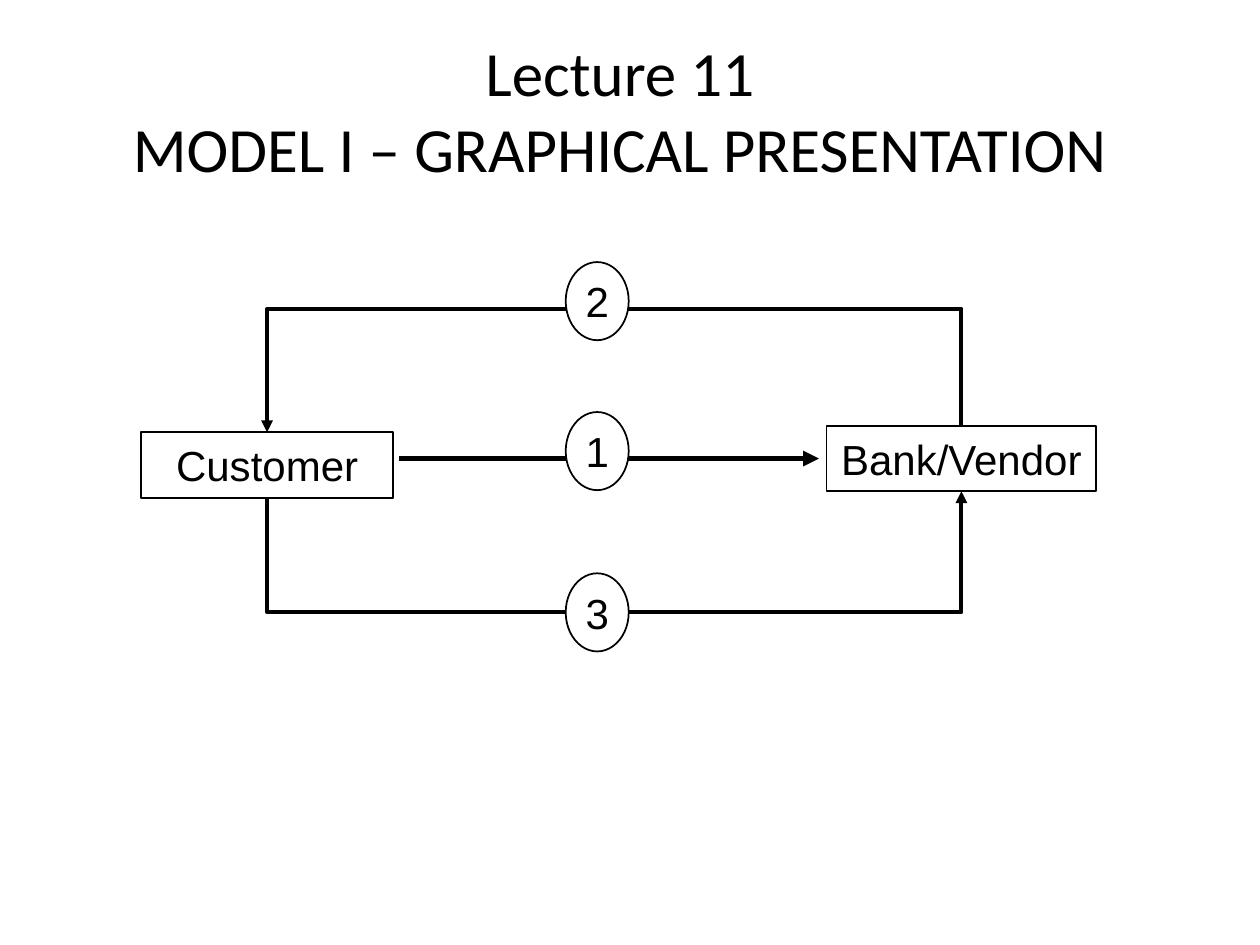
import pptx
import pptx.util
import pptx.dml.color
import pptx.enum.shapes
import pptx.enum.text
import pptx.oxml
import pptx.oxml.ns

Inches, Pt = pptx.util.Inches, pptx.util.Pt
SHAPE = pptx.enum.shapes.MSO_SHAPE
CONNECTOR = pptx.enum.shapes.MSO_CONNECTOR
BLACK = pptx.dml.color.RGBColor(0, 0, 0)
WHITE = pptx.dml.color.RGBColor(255, 255, 255)

# Content
TITLE = ["Lecture 11", "MODEL I – GRAPHICAL PRESENTATION"]
PARTIES = {  # name: left, top, width
    "Customer": (1.12, 3.43, 2.0),
    "Bank/Vendor": (6.56, 3.38, 2.14),
}
BOX_HEIGHT = 0.52
STEPS = {"1": 3.27, "2": 2.08, "3": 4.55}  # number: top of its circle
STEP_LEFT, STEP_WIDTH, STEP_HEIGHT = 4.49, 0.5, 0.62
DIRECT_ARROW = (3.17, 6.5, 3.64)  # start, end, height on the slide
# from, to, connection site (0 top, 2 bottom), level of the long run, rotation
LOOPS = [
    ("Bank/Vendor", "Customer", 0, 2.45, 270),
    ("Customer", "Bank/Vendor", 2, 4.86, 90),
]

presentation = pptx.Presentation()
presentation.slide_width, presentation.slide_height = Inches(10), Inches(7.5)
slide = presentation.slides.add_slide(presentation.slide_layouts[5])


def format_text(text_frame, font_name, size):
    for paragraph in text_frame.paragraphs:
        paragraph.alignment = pptx.enum.text.PP_ALIGN.CENTER
        for run in paragraph.runs:
            run.font.name = font_name
            run.font.size = Pt(size)
            run.font.color.rgb = BLACK
    text_frame.vertical_anchor = pptx.enum.text.MSO_ANCHOR.MIDDLE


def add_node(kind, text, left, top, width, height):
    shape = slide.shapes.add_shape(
        kind, Inches(left), Inches(top), Inches(width), Inches(height))
    shape.shadow.inherit = False
    shape.fill.solid()
    shape.fill.fore_color.rgb = WHITE
    shape.line.color.rgb = BLACK
    shape.line.width = Pt(1)
    shape.text_frame.text = text
    shape.text_frame.word_wrap = False
    format_text(shape.text_frame, "Arial", 24)
    return shape


def add_arrow(kind, start, end, width):
    arrow = slide.shapes.add_connector(
        kind, *(Inches(value) for value in (*start, *end)))
    arrow.line.color.rgb = BLACK
    arrow.line.width = Pt(width)
    line = arrow.line._get_or_add_ln()
    pptx.oxml.ns.qn("a:tailEnd")
    tail = pptx.oxml.parse_xml(
        f'<a:tailEnd {pptx.oxml.ns.nsdecls("a")} type="triangle"/>')
    line.append(tail)
    arrow._element.spPr.append(pptx.oxml.parse_xml(
        f'<a:effectLst {pptx.oxml.ns.nsdecls("a")}/>'))
    return arrow


def add_loop(source, target, site, level, rotation):
    """Three-part elbow leaving and entering on the same side of the boxes."""
    (start_x, start_y), (end_x, end_y) = (
        (left + width / 2, top + (BOX_HEIGHT if site == 2 else 0))
        for left, top, width in (PARTIES[source], PARTIES[target]))
    arrow = add_arrow(CONNECTOR.ELBOW, (start_x, start_y), (end_x, end_y), 2.25)
    arrow.begin_connect(boxes[source], site)
    arrow.end_connect(boxes[target], site)

    # Turned a quarter, the frame's width is the vertical offset of the ends
    offset, span = abs(end_y - start_y), abs(end_x - start_x)
    arrow.left = Inches((start_x + end_x - offset) / 2)
    arrow.top = Inches((start_y + end_y - span) / 2)
    arrow.width, arrow.height = Inches(offset), Inches(span)
    properties = arrow._element.spPr
    frame = properties.find(pptx.oxml.ns.qn("a:xfrm"))
    for name, value in (("rot", rotation * 60000), ("flipH", 1), ("flipV", 1)):
        frame.set(name, str(value))
    bend = round((level - start_y) / (end_y - start_y) * 100000)
    geometry = properties.find(pptx.oxml.ns.qn("a:prstGeom"))
    for old in list(geometry):
        geometry.remove(old)
    geometry.append(pptx.oxml.parse_xml(
        f'<a:avLst {pptx.oxml.ns.nsdecls("a")}>'
        f'<a:gd name="adj1" fmla="val {bend}"/></a:avLst>'))


# Title
title = slide.shapes.title
title.left, title.top = Inches(0.17), Inches(0.33)
title.width, title.height = Inches(9.5), Inches(1.08)
title.text_frame.text = "\n".join(TITLE)
format_text(title.text_frame, "Calibri", 36)

# Parties
boxes = {name: add_node(SHAPE.RECTANGLE, name, left, top, width, BOX_HEIGHT)
         for name, (left, top, width) in PARTIES.items()}

# Arrows
arrow_start, arrow_end, arrow_y = DIRECT_ARROW
add_arrow(CONNECTOR.STRAIGHT, (arrow_start, arrow_y), (arrow_end, arrow_y), 3)
for loop in LOOPS:
    add_loop(*loop)

# Step numbers on top of the arrows
for number, top in STEPS.items():
    add_node(SHAPE.OVAL, number, STEP_LEFT, top, STEP_WIDTH, STEP_HEIGHT)

presentation.save("out.pptx")
